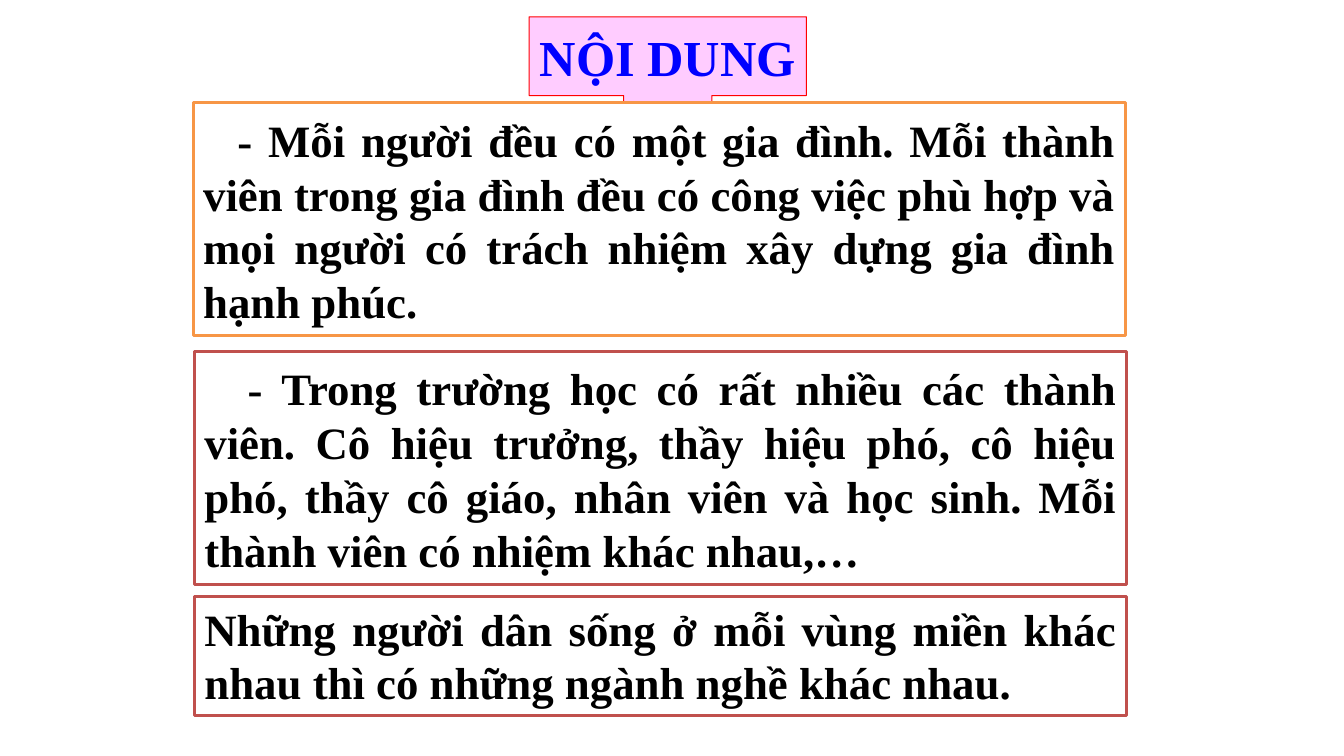
from dataclasses import dataclass

from pptx import Presentation
from pptx.dml.color import RGBColor
from pptx.enum.shapes import MSO_SHAPE
from pptx.enum.text import MSO_ANCHOR, MSO_AUTO_SIZE, PP_ALIGN
from pptx.oxml.ns import qn
from pptx.util import Inches, Pt

RECT = MSO_SHAPE.RECTANGLE
CALLOUT = MSO_SHAPE.DOWN_ARROW_CALLOUT
TOP, MIDDLE = MSO_ANCHOR.TOP, MSO_ANCHOR.MIDDLE
GROW, FIXED = MSO_AUTO_SIZE.SHAPE_TO_FIT_TEXT, MSO_AUTO_SIZE.NONE
CENTER, JUSTIFY = PP_ALIGN.CENTER, PP_ALIGN.JUSTIFY
COLS, ROWS = 160, 90


@dataclass(frozen=True)
class Theme:
    """Colours, font and type sizes."""
    font: str = "Times New Roman"
    head: int = 36
    body: int = 32
    blue: str = "0000FF"
    black: str = "000000"
    white: str = "FFFFFF"
    pink: str = "FFCCFF"
    red: str = "FF0000"
    orange: str = "F79646"
    brick: str = "C0504D"


class Board:
    """Draws styled elements on one slide, placed by grid columns and rows."""

    def __init__(self, deck, theme):
        """Add a title-only slide and size the grid."""
        self.theme = theme
        self.slide = deck.slides.add_slide(deck.slide_layouts[5])
        self.col = deck.slide_width / COLS
        self.row = deck.slide_height / ROWS

    def place(self, x, y, w, h):
        """Turn grid units into slide lengths."""
        return [round(n) for n in
                (x * self.col, y * self.row, w * self.col, h * self.row)]

    def panel(self, kind, area, fill, edge, width):
        """Draw a filled and outlined shape."""
        shape = self.slide.shapes.add_shape(kind, *self.place(*area))
        shape.shadow.inherit = False
        shape.fill.solid()
        shape.fill.fore_color.rgb = RGBColor.from_string(fill)
        shape.line.color.rgb = RGBColor.from_string(edge)
        shape.line.width = Pt(width)
        return shape

    def label(self, shape, text, size, color, align):
        """Set the text of a shape and its look."""
        shape.text_frame.text = text
        para = shape.text_frame.paragraphs[0]
        para.alignment = align
        para.font.name = self.theme.font
        para.font.size = Pt(size)
        para.font.bold = True
        para.font.color.rgb = RGBColor.from_string(color)

    def title(self, text, area, share):
        """Put the title in the body of a callout with a down arrow."""
        theme = self.theme
        callout = self.panel(CALLOUT, area, theme.pink, theme.red, 0.75)
        for spot, value in enumerate((0.75, 0.75, 0.17, share)):
            callout.adjustments[spot] = value
        title = self.slide.shapes.title
        title.element.addprevious(callout.element)
        x, y, w, h = area
        title.left, title.top, title.width, title.height = self.place(
            x, y, w, h * share)
        self.label(title, text, theme.head, theme.blue, CENTER)
        frame = title.text_frame
        frame.auto_size = FIXED
        frame.word_wrap = False
        frame.vertical_anchor = MIDDLE

    def note(self, text, area, edge, indent=0):
        """Draw a bordered box of justified text."""
        theme = self.theme
        box = self.panel(RECT, area, theme.white, edge, 2)
        self.label(box, text, theme.body, theme.black, JUSTIFY)
        frame = box.text_frame
        frame.word_wrap = True
        frame.auto_size = GROW
        frame.vertical_anchor = TOP
        if indent:
            frame.margin_top = Inches(0.1)
            props = box.element.find(".//" + qn("a:pPr"))
            props.set("indent", str(Inches(indent)))


def main():
    """Build the slide and save it."""
    deck = Presentation()
    deck.slide_width, deck.slide_height = Inches(13.33), Inches(7.5)
    theme = Theme()
    board = Board(deck, theme)
    board.title("NỘI DUNG ", (63, 2, 33, 14), 0.67)
    board.note(
        "- Mỗi người đều có một gia đình. Mỗi thành viên trong gia đình đều "
        "có công việc phù hợp và mọi người có trách nhiệm xây dựng gia đình "
        "hạnh phúc.", (23, 12.2, 111, 27.8), theme.orange, 0.34)
    board.note(
        "- Trong trường học có rất nhiều các thành viên. Cô hiệu trưởng, "
        "thầy hiệu phó, cô hiệu phó, thầy cô giáo, nhân viên và học sinh. "
        "Mỗi thành viên có nhiệm khác nhau,…",
        (23.15, 41.8, 111, 27.8), theme.brick, 0.43)
    board.note(
        "Những người dân sống ở mỗi vùng miền khác nhau thì có những ngành "
        "nghề khác nhau.", (23.15, 71, 111, 14.2), theme.brick)
    deck.save("out.pptx")


if __name__ == "__main__":
    main()
